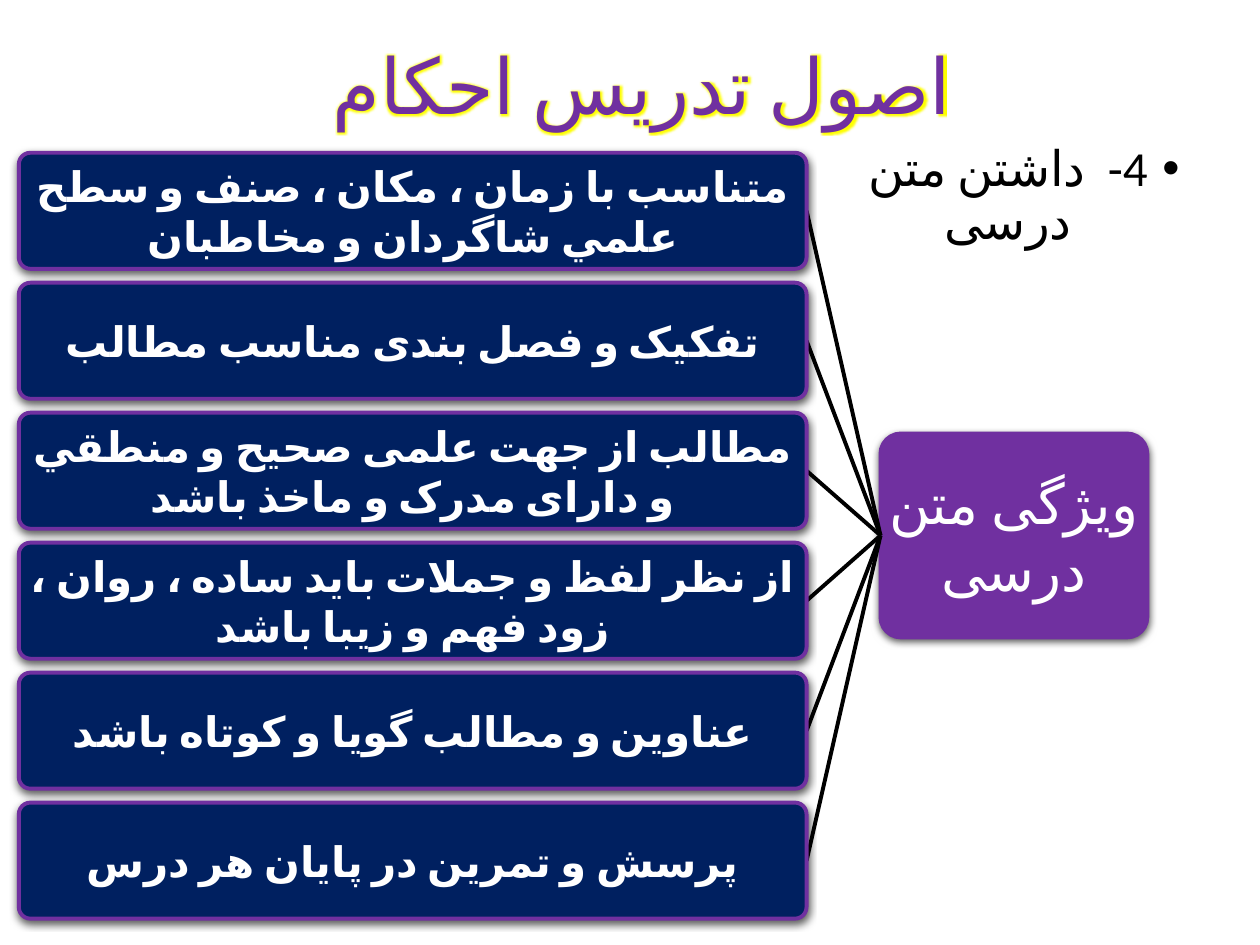
from lxml import etree
from pptx import Presentation
from pptx import util as u
from pptx.dml import color
from pptx.enum import lang, shapes, text
from pptx.oxml import ns, parse_xml

PURPLE, NAVY, WHITE, BLACK, YELLOW = "7030A0", "002060", "FFFFFF", "000000", "FFFF00"
FONT = "Calibri"
FEATURES = [
    "متناسب با زمان ، مكان ، صنف و سطح علمي شاگردان و مخاطبان",
    "تفکیک و فصل بندی مناسب مطالب",
    "مطالب از جهت علمی صحيح و منطقي و دارای مدرک و ماخذ باشد",
    "از نظر لفظ و جملات بايد ساده ، روان ، زود فهم و زيبا باشد",
    "عناوين و مطالب گويا و كوتاه باشد",
    "پرسش و تمرین در پایان هر درس",
]
FEATURE_LEFT, FEATURE_TOP, FEATURE_WIDTH, FEATURE_HEIGHT = 0.38, 3.08, 15.88, 2.34
FEATURE_PITCH = 2.62
TOPIC_LEFT, TOPIC_TOP, TOPIC_WIDTH, TOPIC_HEIGHT = 17.75, 8.74, 5.38, 4.11
LEFT_SITE, RIGHT_SITE = 1, 3


def rgb(value):
    return color.RGBColor.from_string(value)


def set_attributes(target, values):
    for name, value in values.items():
        setattr(target, name, value)


def write_text(shape, content, size, font_color, bold=False, **paragraph_format):
    paragraph = shape.text_frame.paragraphs[0]
    set_attributes(paragraph, {"alignment": text.PP_ALIGN.CENTER, **paragraph_format})
    run = paragraph.add_run()
    run.text = content
    font_format = {
        "name": FONT,
        "size": u.Pt(size),
        "bold": bold,
        "language_id": lang.MSO_LANGUAGE_ID.FARSI,
    }
    set_attributes(run.font, font_format)
    run.font.color.rgb = rgb(font_color)
    properties = run._r.get_or_add_rPr()
    etree.SubElement(properties, ns.qn("a:cs")).set("typeface", FONT)
    return properties


def place(shape, left, top, width, height):
    values = {"left": left, "top": top, "width": width, "height": height}
    set_attributes(shape, {name: u.Cm(value) for name, value in values.items()})


def effect_list(effect):
    return parse_xml(f'<a:effectLst {ns.nsdecls("a")}>{effect}</a:effectLst>')


def fill_title(title):
    place(title, 2, -0.03, 21.9, 3.68)
    title.text_frame.vertical_anchor = text.MSO_ANCHOR.MIDDLE
    properties = write_text(title, "اصول تدریس احکام", 44, PURPLE, line_spacing=0.9)
    glow = f'<a:glow rad="{u.Pt(3)}"><a:srgbClr val="{YELLOW}"/></a:glow>'
    properties.find(ns.qn("a:solidFill")).addnext(effect_list(glow))


def fill_body(body):
    place(body, 16.92, 2.77, 7.44, 15.16)
    properties = body.text_frame.paragraphs[0]._p.get_or_add_pPr()
    indent = u.Cm(0.64)
    for name, value in {"marL": indent, "indent": -indent, "rtl": 1}.items():
        properties.set(name, str(value))
    etree.SubElement(properties, ns.qn("a:buChar")).set("char", "•")
    write_text(body, "4-  داشتن متن درسی", 28, BLACK, line_spacing=0.9, space_before=u.Pt(0))


def add_box(slide, bounds, content, fill, size, bold=False):
    box = slide.shapes.add_shape(
        shapes.MSO_SHAPE.ROUNDED_RECTANGLE, *[u.Cm(value) for value in bounds]
    )
    box.adjustments[0] = 0.1
    box.fill.solid()
    box.fill.fore_color.rgb = rgb(fill)
    box.line.color.rgb = rgb(PURPLE)
    box.line.width = u.Pt(2.25)
    shadow = (
        f'<a:outerShdw blurRad="{u.Pt(4.5)}" dist="{u.Pt(1.5)}" dir="5400000" rotWithShape="0">'
        f'<a:srgbClr val="{BLACK}"><a:alpha val="63000"/></a:srgbClr></a:outerShdw>'
    )
    box._element.spPr.append(effect_list(shadow))
    sides = ("left", "right", "top", "bottom")
    set_attributes(box.text_frame, {f"margin_{side}": u.Cm(0.05) for side in sides})
    set_attributes(
        box.text_frame, {"word_wrap": True, "vertical_anchor": text.MSO_ANCHOR.MIDDLE}
    )
    write_text(box, content, size, WHITE, bold)
    return box


def add_branch(slide):
    branch = slide.shapes.add_connector(shapes.MSO_CONNECTOR.STRAIGHT, 0, 0, 0, 0)
    branch.line.color.rgb = rgb(BLACK)
    branch.line.width = u.Pt(2.25)
    branch._element.spPr.append(effect_list(""))
    return branch


def main():
    presentation = Presentation()
    set_attributes(presentation, {"slide_width": u.Cm(25.4), "slide_height": u.Cm(19.05)})
    slide = presentation.slides.add_slide(presentation.slide_layouts[1])
    fill_title(slide.shapes.title)
    fill_body(slide.placeholders[1])

    topic_bounds = (TOPIC_LEFT, TOPIC_TOP, TOPIC_WIDTH, TOPIC_HEIGHT)
    topic = add_box(slide, topic_bounds, "ویژگی متن درسی", PURPLE, 32)
    for row, feature in enumerate(FEATURES):
        top = FEATURE_TOP + row * FEATURE_PITCH
        branch = add_branch(slide)
        bounds = (FEATURE_LEFT, top, FEATURE_WIDTH, FEATURE_HEIGHT)
        box = add_box(slide, bounds, feature, NAVY, 24, bold=True)
        branch.begin_connect(topic, LEFT_SITE)
        branch.end_connect(box, RIGHT_SITE)

    presentation.save("out.pptx")


if __name__ == "__main__":
    main()
